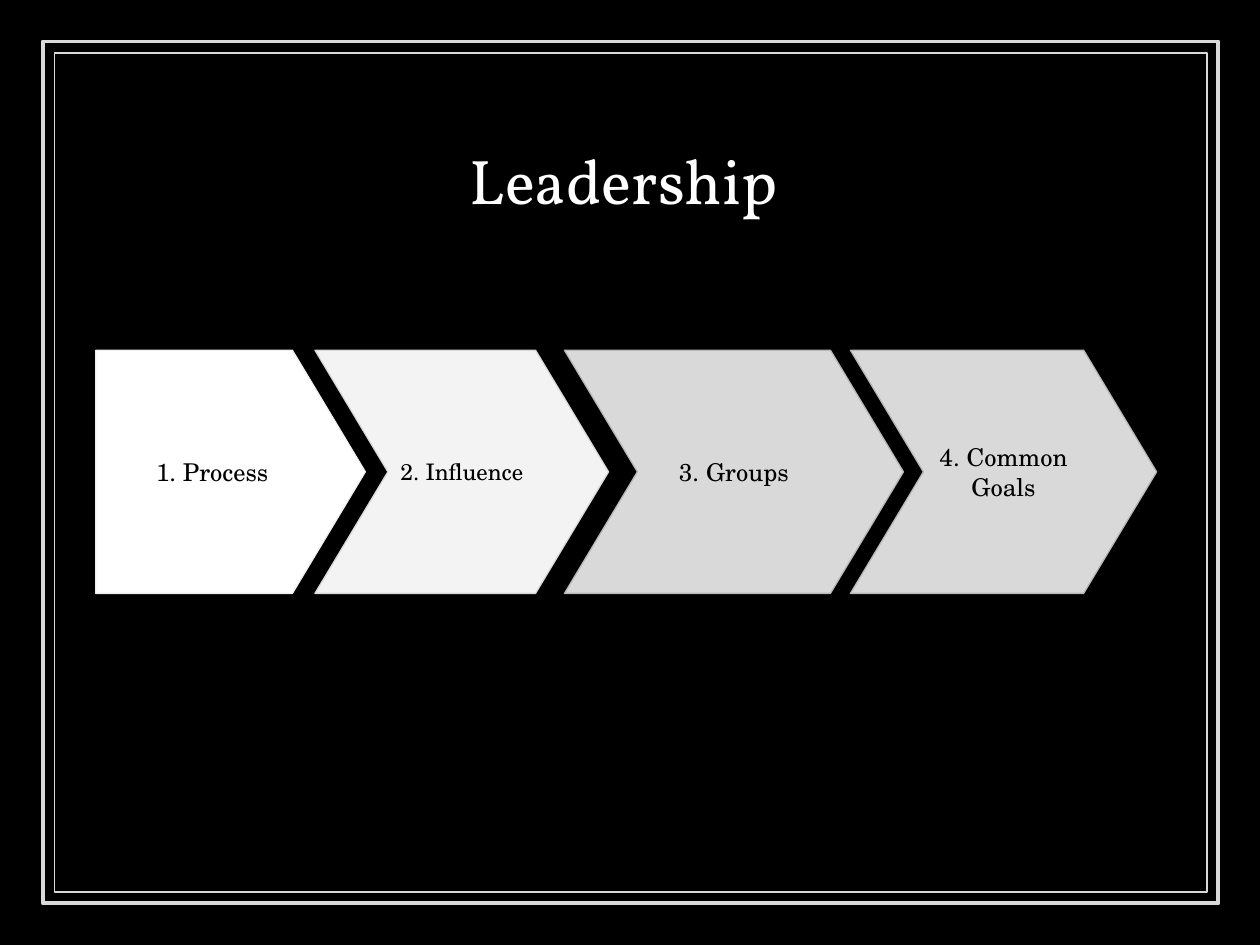
from pptx import Presentation
from pptx.dml.color import RGBColor
from pptx.enum.shapes import MSO_SHAPE
from pptx.enum.text import MSO_ANCHOR, PP_ALIGN
from pptx.util import Inches, Pt

COLORS = {
    "black": "000000",
    "white": "FFFFFF",
    "pale": "F3F3F3",
    "mist": "EFEFEF",
    "silver": "D9D9D9",
    "gray": "B7B7B7",
}
TITLE_FONT = "Vollkorn"
STEP_FONT = "TeX Gyre Schola"

# Text, offset from the row's left edge, width, text size, fill, line
STEPS = [
    ("1. Process", 0, 2.14, 14, "white", "mist"),
    ("2. Influence", 1.74, 2.33, 13, "pale", "silver"),
    ("3. Groups", 3.72, 2.69, 14, "silver", "gray"),
    ("4. Common Goals", 5.99, 2.43, 14, "silver", "gray"),
]


def color(name):
    return RGBColor.from_string(COLORS[name])


def set_text(shape, text, font, size, color_name):
    frame = shape.text_frame
    frame.text = text
    frame.word_wrap = True
    frame.vertical_anchor = MSO_ANCHOR.MIDDLE
    frame.margin_left = frame.margin_right = Inches(0.1)
    frame.margin_top = frame.margin_bottom = Inches(0.1)
    para = frame.paragraphs[0]
    para.alignment = PP_ALIGN.CENTER
    span = para.runs[0]
    span.font.name = font
    span.font.size = Pt(size)
    span.font.color.rgb = color(color_name)


def add_outlined(page, kind, box, line, weight, fill=None):
    shape = page.shapes.add_shape(kind, *[Inches(length) for length in box])
    shape.shadow.inherit = False
    if fill:
        shape.fill.solid()
        shape.fill.fore_color.rgb = color(fill)
    else:
        shape.fill.background()
    shape.line.color.rgb = color(line)
    shape.line.width = Pt(weight)
    return shape


def add_frame(page, box):
    """Thick outer border with a thin one set inside it."""
    left, top, width, height = box
    gap = 0.09
    inner = (left + gap, top + gap, width - 2 * gap, height - 2 * gap)
    add_outlined(page, MSO_SHAPE.RECTANGLE, inner, "silver", 0.75)
    add_outlined(page, MSO_SHAPE.RECTANGLE, box, "silver", 2.25)


def add_title(page, box):
    title = page.shapes.add_textbox(*[Inches(length) for length in box])
    set_text(title, "Leadership ", TITLE_FONT, 36, "white")


def add_steps(page, left, top, height):
    """Row of arrows: a flat-backed first step, then chevrons."""
    for index, (text, offset, width, size, fill, line) in enumerate(STEPS):
        kind = MSO_SHAPE.CHEVRON if index else MSO_SHAPE.PENTAGON
        box = (left + offset, top, width, height)
        step = add_outlined(page, kind, box, line, 0.75, fill)
        step.adjustments[0] = 0.3
        set_text(step, text, STEP_FONT, size, "black")


def main():
    deck = Presentation()
    deck.slide_width, deck.slide_height = Inches(10), Inches(7.5)
    page = deck.slides.add_slide(deck.slide_layouts[6])
    page.background.fill.solid()
    page.background.fill.fore_color.rgb = color("black")

    add_frame(page, (0.34, 0.33, 9.33, 6.84))
    add_title(page, (1.93, 0.81, 6.14, 1.22))
    add_steps(page, 0.76, 2.78, 1.93)
    deck.save("out.pptx")


if __name__ == "__main__":
    main()
